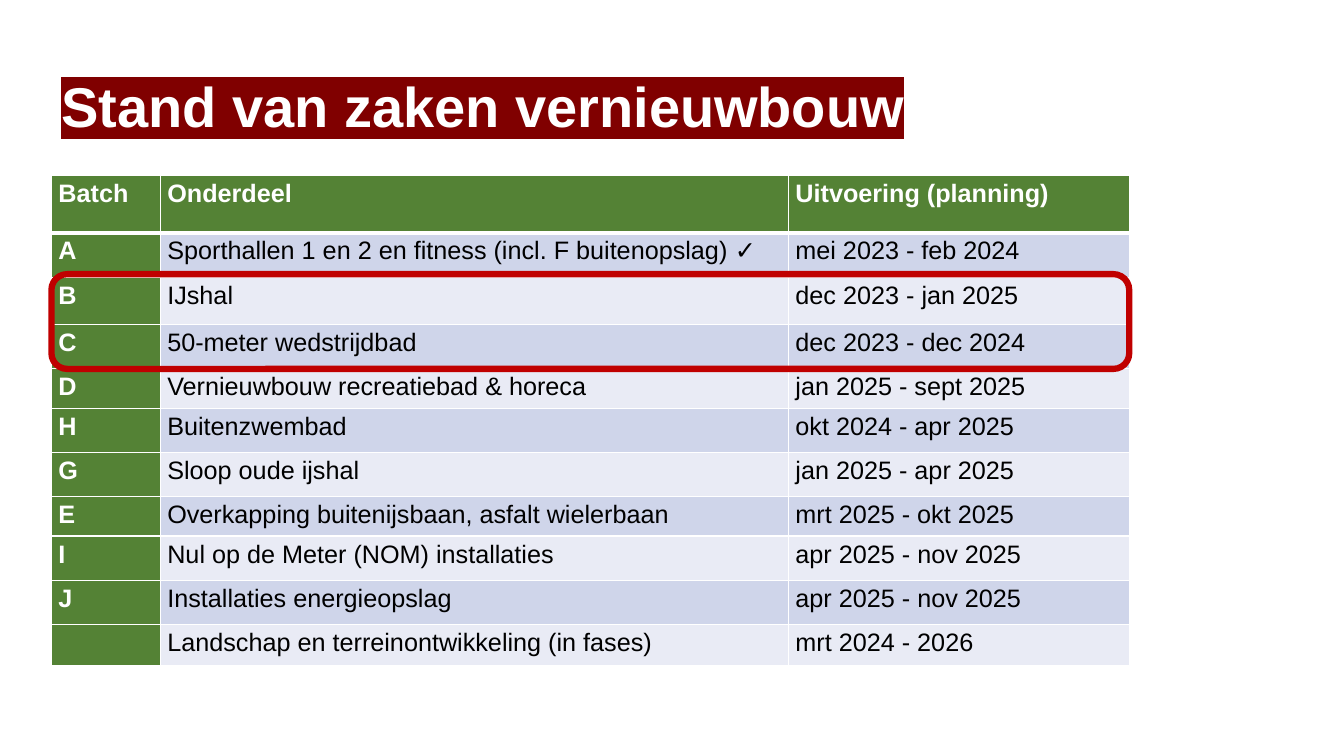
from pptx import Presentation
from pptx import util as u
from pptx.dml.color import RGBColor
from pptx.enum import shapes, text
from pptx.oxml import ns
from lxml import etree

GREEN, WHITE, BLACK = "548235", "FFFFFF", "000000"
BANDS = ["CFD5EA", "E9EBF5"]
COLUMN_WIDTHS = [1.08, 6.23, 3.38]
ROW_HEIGHTS = [0.57, 0.44, 0.47, 0.44, 0.39, 0.44, 0.44, 0.39, 0.44, 0.44, 0.41]
PLANNING = [
    ("Batch", "Onderdeel", "Uitvoering (planning)"),
    ("A", "Sporthallen 1 en 2 en fitness (incl. F buitenopslag) ✓", "mei 2023 - feb 2024"),
    ("B", "IJshal", "dec 2023 - jan 2025"),
    ("C", "50-meter wedstrijdbad", "dec 2023 - dec 2024"),
    ("D", "Vernieuwbouw recreatiebad & horeca", "jan 2025 - sept 2025"),
    ("H", "Buitenzwembad", "okt 2024 - apr 2025"),
    ("G", "Sloop oude ijshal", "jan 2025 - apr 2025"),
    ("E", "Overkapping buitenijsbaan, asfalt wielerbaan", "mrt 2025 - okt 2025"),
    ("I", "Nul op de Meter (NOM) installaties", "apr 2025 - nov 2025"),
    ("J", "Installaties energieopslag", "apr 2025 - nov 2025"),
    ("", "Landschap en terreinontwikkeling (in fases)", "mrt 2024 - 2026"),
]


def color(code):
    return RGBColor.from_string(code)


def add_solid_color(parent, tag, code):
    holder = etree.SubElement(parent, ns.qn(tag))
    etree.SubElement(holder, ns.qn("a:srgbClr"), val=code)


class SlideBuilder:
    font = "Arial"

    def __init__(self, slide):
        self.slide = slide

    def add_span(self, para, words, size, code, bold=False, highlight=None):
        span = para.add_run()
        span.text = words
        span.font.size = u.Pt(size)
        span.font.bold = bold
        span.font.color.rgb = color(code)
        if highlight:
            add_solid_color(span.font._element, "a:highlight", highlight)
        span.font.name = self.font

    def title(self, words, left, top, width, height):
        box = self.slide.shapes.add_textbox(*map(u.Inches, (left, top, width, height)))
        frame = box.text_frame
        frame.word_wrap = True
        frame.vertical_anchor = text.MSO_ANCHOR.MIDDLE
        para = frame.paragraphs[0]
        para.line_spacing = 0.9
        self.add_span(para, words, 40, WHITE, True, "800000")

    def borders(self, cell, top, bottom):
        properties = cell._tc.get_or_add_tcPr()
        for side, width in (("L", 1), ("R", 1), ("T", top), ("B", bottom)):
            line = etree.SubElement(properties, ns.qn("a:ln" + side), w=str(u.Pt(width)))
            add_solid_color(line, "a:solidFill", WHITE)

    def cell(self, cell, words, row, column):
        header = row == 0
        strong = header or column == 0
        self.borders(cell, 3 if row == 1 else 1, 3 if header else 1)
        cell.fill.solid()
        cell.fill.fore_color.rgb = color(GREEN if strong else BANDS[(row - 1) % 2])
        cell.margin_left = cell.margin_right = u.Inches(0.07)
        cell.margin_top = cell.margin_bottom = 0
        para = cell.text_frame.paragraphs[0]
        para.line_spacing = 1.15
        body, mark, _ = words.partition("✓")
        if body:
            self.add_span(para, body, 18, WHITE if strong else BLACK, strong)
        if mark:
            self.add_span(para, mark, 18, BLACK, True)

    def table(self, rows, left, top, widths, heights):
        area = map(u.Inches, (left, top, sum(widths), sum(heights)))
        table = self.slide.shapes.add_table(len(rows), len(widths), *area).table
        table.horz_banding = False
        for column, width in zip(table.columns, widths):
            column.width = u.Inches(width)
        for index, (row, height) in enumerate(zip(rows, heights)):
            table.rows[index].height = u.Inches(height)
            for column, words in enumerate(row):
                self.cell(table.cell(index, column), words, index, column)

    def frame(self, left, top, width, height, code, weight):
        shape = self.slide.shapes.add_shape(
            shapes.MSO_SHAPE.ROUNDED_RECTANGLE, *map(u.Inches, (left, top, width, height)))
        shape.shadow.inherit = False
        shape.fill.background()
        shape.line.color.rgb = color(code)
        shape.line.width = u.Pt(weight)


def main():
    deck = Presentation()
    deck.slide_width, deck.slide_height = u.Inches(13.33), u.Inches(7.5)
    page = SlideBuilder(deck.slides.add_slide(deck.slide_layouts[6]))

    # Title
    page.title("Stand van zaken vernieuwbouw", 0.51, 0.71, 10.4, 0.75)

    # Planning table
    page.table(PLANNING, 0.51, 1.74, COLUMN_WIDTHS, ROW_HEIGHTS)

    # Frame around batches B and C
    page.frame(0.51, 2.72, sum(COLUMN_WIDTHS), 0.94, "C00000", 4.5)

    deck.save("out.pptx")


if __name__ == "__main__":
    main()
